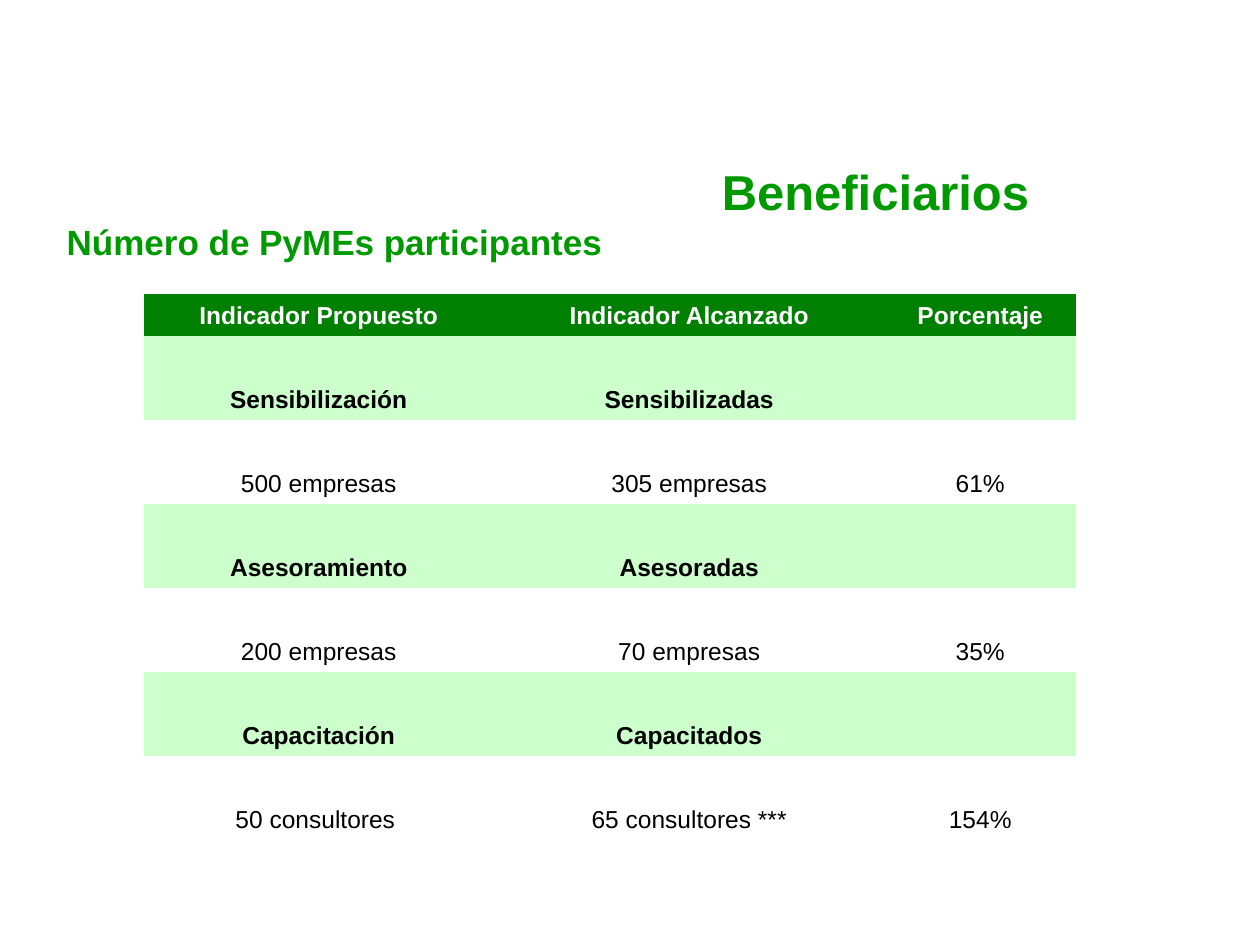
import dataclasses

import pptx
import pptx.dml.color
import pptx.enum.text
import pptx.oxml.ns
import pptx.util

Inches = pptx.util.Inches
Align = pptx.enum.text.PP_ALIGN
Anchor = pptx.enum.text.MSO_ANCHOR

HUES = {
    "title": "009900",
    "head": "008000",
    "band": "CCFFCC",
    "white": "FFFFFF",
    "black": "000000",
}
PLAIN = "{2D5ABB26-0587-4C30-8999-92F81FD0307C}"  # table style: no grid
COLS = (2.78, 3.1, 1.52)
TOTAL = 4.34


@dataclasses.dataclass
class Label:
    text: str
    left: float
    top: float
    width: float
    height: float
    size: int
    anchor: Anchor


@dataclasses.dataclass
class Row:
    cells: tuple[str, ...]
    fill: str
    hue: str = "black"
    bold: bool = False


LABELS = (
    Label("Número de PyMEs participantes", 0.43, 1.7, 8.58, 0.43, 20, Anchor.MIDDLE),
    Label("Beneficiarios", 5.63, 1.23, 2.99, 0.57, 28, Anchor.TOP),
)
HEAD = Row(
    ("Indicador Propuesto", "Indicador Alcanzado", "Porcentaje"), "head", "white", True
)
BODY = (
    Row(("Sensibilización", "Sensibilizadas", ""), "band", bold=True),
    Row(("500 empresas", "305 empresas", "61%"), "white"),
    Row(("Asesoramiento", "Asesoradas", ""), "band", bold=True),
    Row(("200 empresas", "70 empresas", "35%"), "white"),
    Row(("Capacitación", "Capacitados", ""), "band", bold=True),
    Row(("50 consultores ", "65 consultores ***", "154%"), "white"),
)


def color(name: str) -> pptx.dml.color.RGBColor:
    return pptx.dml.color.RGBColor.from_string(HUES[name])


def write(frame, text: str, *, size: int, hue: str, bold: bool, align=Align.LEFT) -> None:
    para = frame.paragraphs[0]
    para.alignment = align
    run = para.add_run()
    run.text = text
    run.font.name = "Arial"
    run.font.size = pptx.util.Pt(size)
    run.font.bold = bold
    run.font.color.rgb = color(hue)


def add_label(slide, label: Label) -> None:
    box = slide.shapes.add_textbox(
        *map(Inches, (label.left, label.top, label.width, label.height))
    )
    frame = box.text_frame
    frame.word_wrap = True
    frame.vertical_anchor = label.anchor
    write(frame, label.text, size=label.size, hue="title", bold=True)


def fill_cell(cell, text: str, row: Row) -> None:
    """Empty cells lose their margins so that they do not stretch the row."""
    cell.fill.solid()
    cell.fill.fore_color.rgb = color(row.fill)
    cell.vertical_anchor = Anchor.BOTTOM
    if text:
        write(cell.text_frame, text, size=14, hue=row.hue, bold=row.bold,
              align=Align.CENTER)
    else:
        cell.margin_top = cell.margin_bottom = 0


def add_grid(slide) -> None:
    """Each body row follows an empty row of the same fill."""
    rows = [HEAD]
    for row in BODY:
        rows += [dataclasses.replace(row, cells=("",) * len(COLS)), row]
    shape = slide.shapes.add_table(
        len(rows), len(COLS), *map(Inches, (1.14, 2.33, sum(COLS), TOTAL))
    )
    shape.element.find(".//" + pptx.oxml.ns.qn("a:tableStyleId")).text = PLAIN
    table = shape.table
    table.first_row = table.horz_banding = False
    for col, width in zip(table.columns, COLS):
        col.width = Inches(width)
    for line, row in zip(table.rows, rows):
        line.height = Inches(TOTAL / len(rows))
        for cell, text in zip(line.cells, row.cells):
            fill_cell(cell, text, row)


def main() -> None:
    deck = pptx.Presentation()
    deck.slide_width, deck.slide_height = Inches(10), Inches(7.5)
    slide = deck.slides.add_slide(deck.slide_layouts[6])
    for label in LABELS:
        add_label(slide, label)
    add_grid(slide)
    deck.save("out.pptx")


if __name__ == "__main__":
    main()
